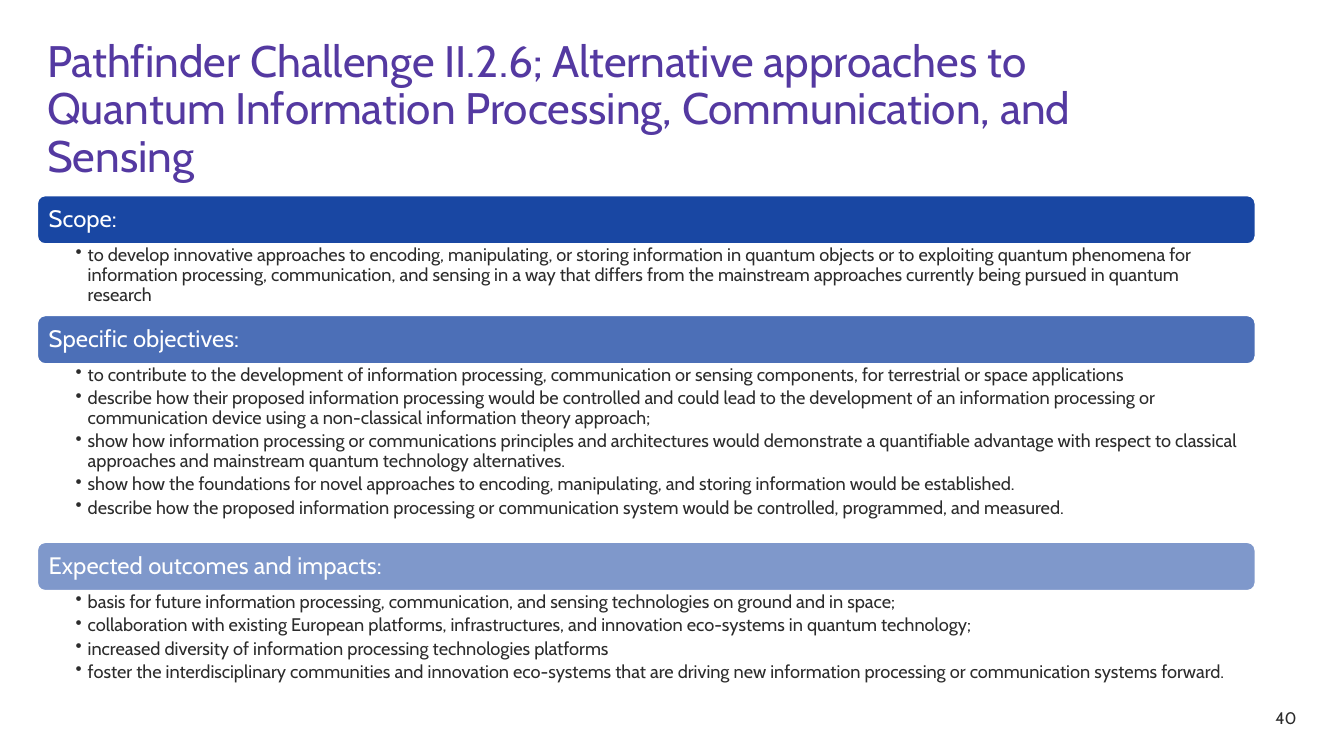
from dataclasses import dataclass

from lxml import etree
from pptx import Presentation
from pptx.dml.color import RGBColor
from pptx.enum.shapes import MSO_SHAPE
from pptx.enum.text import MSO_ANCHOR, PP_ALIGN
from pptx.oxml.ns import qn
from pptx.util import Pt

ROUNDED = MSO_SHAPE.ROUNDED_RECTANGLE
TOP, MIDDLE = MSO_ANCHOR.TOP, MSO_ANCHOR.MIDDLE
LEFT = PP_ALIGN.LEFT
EMU_PER_PX = 9144  # 100 px to the inch


@dataclass(frozen=True)
class Theme:
    font: str = "Cabin"
    title: str = "5439A1"
    bar: str = "003399"
    white: str = "FFFFFF"
    ink: str = "2C2C2C"
    title_size: float = 31.5
    bar_size: float = 17
    body_size: float = 13
    number_size: float = 12
    line_spacing: float = 0.9


def px(value):
    return value * EMU_PER_PX


class SlideBuilder:
    def __init__(self, slide, theme):
        self.slide = slide
        self.theme = theme

    def fill_frame(self, frame, lines, size, color, insets=(10, 5, 10, 5),
                   anchor=TOP, spacing=None, after=0, bullets=False):
        frame.word_wrap = True
        frame.vertical_anchor = anchor
        (frame.margin_left, frame.margin_top,
         frame.margin_right, frame.margin_bottom) = map(px, insets)
        for index, line in enumerate(lines):
            paragraph = frame.add_paragraph() if index else frame.paragraphs[0]
            paragraph.alignment = LEFT
            paragraph.space_after = Pt(after)
            if spacing:
                paragraph.line_spacing = spacing
            if bullets:
                self.add_bullet(paragraph)
            run = paragraph.add_run()
            run.text = line
            run.font.name = self.theme.font
            run.font.size = Pt(size)
            run.font.color.rgb = RGBColor.from_string(color)

    def add_bullet(self, paragraph, indent=12):
        paragraph.level = 1
        properties = paragraph._p.get_or_add_pPr()
        properties.set("marL", str(px(indent)))
        properties.set("indent", str(-px(indent)))
        etree.SubElement(properties, qn("a:buChar")).set("char", "•")

    def text(self, box, lines, size, color, **options):
        shape = self.slide.shapes.add_textbox(*map(px, box))
        self.fill_frame(shape.text_frame, lines, size, color, **options)

    def bar(self, box, label, opacity):
        theme = self.theme
        shape = self.slide.shapes.add_shape(ROUNDED, *map(px, box))
        shape.shadow.inherit = False
        shape.fill.solid()
        shape.fill.fore_color.rgb = RGBColor.from_string(theme.bar)
        color = shape.fill._xPr.find(".//" + qn("a:srgbClr"))
        etree.SubElement(color, qn("a:alpha")).set("val", str(opacity * 1000))
        shape.line.color.rgb = RGBColor.from_string(theme.white)
        shape.line.width = Pt(1)
        self.fill_frame(shape.text_frame, [label], theme.bar_size, theme.white,
                        insets=(9, 7, 9, 7), anchor=MIDDLE,
                        spacing=theme.line_spacing)

    def bullet_list(self, box, lines):
        theme = self.theme
        self.text(box, lines, theme.body_size, theme.ink,
                  insets=(38, 2, 13, 2), spacing=theme.line_spacing,
                  after=0.2 * theme.body_size, bullets=True)


TITLE = ("Pathfinder Challenge II.2.6; Alternative approaches to Quantum "
         "Information Processing, Communication, and Sensing")

# Label, bar opacity in percent, list height, bullets
SECTIONS = [
    ("Scope:", 90, 71, [
        "to develop innovative approaches to encoding, manipulating, or storing "
        "information in quantum objects or to exploiting quantum phenomena for "
        "information processing, communication, and sensing in a way that differs "
        "from the mainstream approaches currently being pursued in quantum research",
    ]),
    ("Specific objectives:", 70, 177, [
        "to contribute to the development of information processing, communication "
        "or sensing components, for terrestrial or space applications",
        "describe how their proposed information processing would be controlled and "
        "could lead to the development of an information processing or communication "
        "device using a non-classical information theory approach;",
        "show how information processing or communications principles and "
        "architectures would demonstrate a quantifiable advantage with respect to "
        "classical approaches and mainstream quantum technology alternatives.",
        "show how the foundations for novel approaches to encoding, manipulating, "
        "and storing information would be established.",
        "describe how the proposed information processing or communication system "
        "would be controlled, programmed, and measured.",
    ]),
    ("Expected outcomes and impacts:", 50, 131, [
        "basis for future information processing, communication, and sensing "
        "technologies on ground and in space;",
        "collaboration with existing European platforms, infrastructures, and "
        "innovation eco-systems in quantum technology;",
        "increased diversity of information processing technologies platforms",
        "foster the interdisciplinary communities and innovation eco-systems that "
        "are driving new information processing or communication systems forward.",
    ]),
]


def main():
    presentation = Presentation()
    presentation.slide_width = px(1333)
    presentation.slide_height = px(750)
    theme = Theme()
    slide = presentation.slides.add_slide(presentation.slide_layouts[6])
    builder = SlideBuilder(slide, theme)

    # Title and slide number
    builder.text((37, 34, 1087, 145), [TITLE], theme.title_size, theme.title,
                 spacing=theme.line_spacing)
    builder.text((1255, 697, 78, 40), ["40"], theme.number_size, theme.ink)

    # Sections stacked from the top down
    left, top, width, bar_height = 37, 194, 1208, 48
    for label, opacity, list_height, lines in SECTIONS:
        builder.bar((left, top, width, bar_height), label, opacity)
        top += bar_height
        builder.bullet_list((left, top, width, list_height), lines)
        top += list_height

    presentation.save("out.pptx")


if __name__ == "__main__":
    main()
